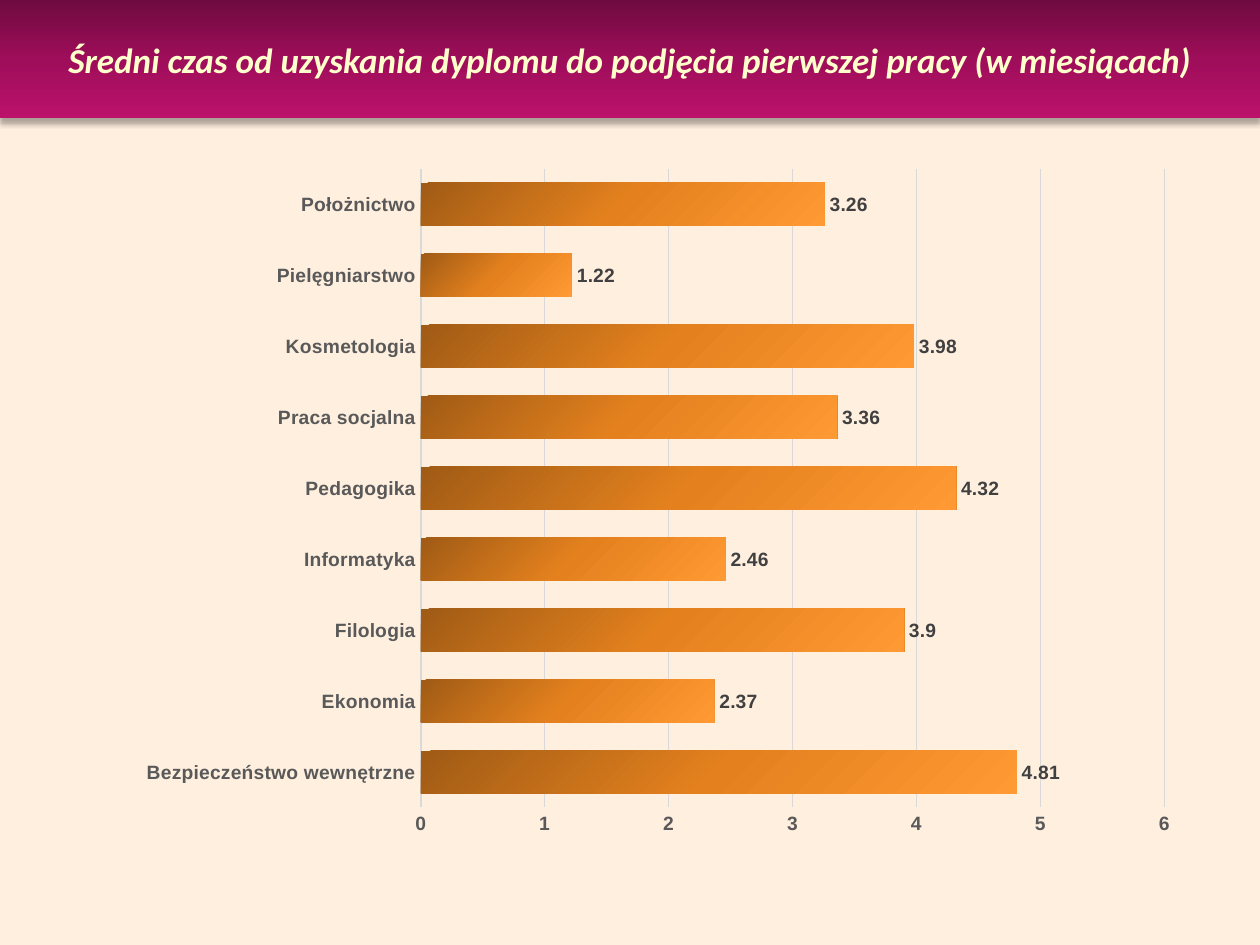
from dataclasses import dataclass

from lxml.etree import SubElement
from pptx import Presentation
from pptx.chart.data import CategoryChartData
from pptx.dml.color import RGBColor
from pptx.enum.chart import XL_CHART_TYPE, XL_LABEL_POSITION, XL_TICK_MARK
from pptx.enum.text import MSO_ANCHOR, MSO_AUTO_SIZE, PP_ALIGN
from pptx.oxml.ns import qn
from pptx.util import Inches, Pt


@dataclass(frozen=True)
class Theme:
    back: str = "FFEFDF"
    cream: str = "FFFFCC"
    plum: tuple = ("6F0A3F", "9E0E5A", "BB116B")
    amber: tuple = ("A05B15", "E4811E", "FF9933")
    axis: str = "595959"
    label: str = "404040"
    rule: str = "D9D9D9"
    head: str = "Calibri"
    body: str = "Arial"
    big: int = 20
    small: int = 11


TITLE = "Średni czas od uzyskania dyplomu do podjęcia pierwszej pracy (w miesiącach)"
MONTHS = {
    "Bezpieczeństwo wewnętrzne": 4.81,
    "Ekonomia": 2.37,
    "Filologia": 3.9,
    "Informatyka": 2.46,
    "Pedagogika": 4.32,
    "Praca socjalna": 3.36,
    "Kosmetologia": 3.98,
    "Pielęgniarstwo": 1.22,
    "Położnictwo": 3.26,
}


def rgb(code):
    return RGBColor.from_string(code)


class Deck:
    """Holds the theme and the current slide."""

    def __init__(self, theme):
        self.theme = theme
        self.prs = Presentation()
        self.prs.slide_width, self.prs.slide_height = Inches(10), Inches(7.5)
        self.slide = self.prs.slides.add_slide(self.prs.slide_layouts[5])
        fill = self.slide.background.fill
        fill.solid()
        fill.fore_color.rgb = rgb(theme.back)

    def blend(self, fill, props, tones, angle):
        """Fill with evenly spaced tones; angle is clockwise in degrees."""
        fill.gradient()
        fill.gradient_angle = 360 - angle
        stops = props.find(qn("a:gradFill")).find(qn("a:gsLst"))
        for stop in list(stops):
            stops.remove(stop)
        for i, tone in enumerate(tones):
            place = 100000 * i // (len(tones) - 1)
            stop = SubElement(stops, qn("a:gs"), pos=str(place))
            SubElement(stop, qn("a:srgbClr"), val=tone)

    def shade(self, shape):
        """Give the shape a soft shadow straight below it."""
        shape.shadow.inherit = False
        effects = shape._element.spPr.find(qn("a:effectLst"))
        shadow = SubElement(
            effects, qn("a:outerShdw"), blurRad=str(Pt(3.5)), dist=str(Pt(2.2)),
            dir="5400000", algn="t", rotWithShape="0")
        color = SubElement(shadow, qn("a:srgbClr"), val="000000")
        SubElement(color, qn("a:alpha"), val="32000")

    def style(self, font, color, size, face):
        font.name, font.size, font.bold = face, Pt(size), True
        font.color.rgb = rgb(color)

    def title(self, text):
        look = self.theme
        band = self.slide.shapes.title
        band.left, band.top = Inches(0), Inches(0)
        band.width, band.height = Inches(10), Inches(0.94)
        self.blend(band.fill, band._element.spPr, look.plum, 90)
        self.shade(band)
        frame = band.text_frame
        frame.word_wrap = True
        frame.auto_size = MSO_AUTO_SIZE.NONE
        frame.vertical_anchor = MSO_ANCHOR.MIDDLE
        para = frame.paragraphs[0]
        para.alignment = PP_ALIGN.CENTER
        run = para.add_run()
        run.text = text
        self.style(run.font, look.cream, look.big, look.head)
        run.font.italic = True

    def bars(self, values):
        look = self.theme
        data = CategoryChartData()
        data.categories = list(values)
        data.add_series("Series 1", list(values.values()))
        chart = self.slide.shapes.add_chart(
            XL_CHART_TYPE.BAR_CLUSTERED, Inches(0.98), Inches(1.23),
            Inches(8.43), Inches(5.51), data).chart
        chart.has_legend = chart.has_title = False
        self.style(chart.font, "000000", look.small, look.body)
        self.frame(chart)
        for axis in (chart.category_axis, chart.value_axis):
            axis.major_tick_mark = axis.minor_tick_mark = XL_TICK_MARK.NONE
            self.style(axis.tick_labels.font, look.axis, look.small, look.body)
        self.rule(chart.category_axis.format.line, 1)
        scale = chart.value_axis
        scale.minimum_scale, scale.maximum_scale, scale.major_unit = 0, 6, 1
        scale.format.line.fill.background()
        self.rule(scale.major_gridlines.format.line, 0.75)
        plot = chart.plots[0]
        plot.gap_width, plot.overlap, plot.vary_by_categories = 67, -13, False
        series = plot.series[0]
        fill = series.format.fill
        self.blend(fill, series._element.spPr, look.amber, 45)
        labels = series.data_labels
        labels.show_value = True
        labels.position = XL_LABEL_POSITION.OUTSIDE_END
        self.style(labels.font, look.label, look.small, look.body)

    def rule(self, line, width):
        line.width = Pt(width)
        line.color.rgb = rgb(self.theme.rule)

    def frame(self, chart):
        """Fix the inner plot area as shares of the chart."""
        area = chart._chartSpace.chart.plotArea
        layout = area.find(qn("c:layout"))
        if layout is None:
            layout = SubElement(area, qn("c:layout"))
            area.insert(0, layout)
        manual = SubElement(layout, qn("c:manualLayout"))
        for tag, value in (("layoutTarget", "inner"), ("xMode", "edge"),
                           ("yMode", "edge"), ("x", "0.28"), ("y", "0.02"),
                           ("w", "0.7"), ("h", "0.92")):
            SubElement(manual, qn("c:" + tag), val=value)


def main():
    deck = Deck(Theme())
    deck.title(TITLE)
    deck.bars(MONTHS)
    deck.prs.save("out.pptx")


if __name__ == "__main__":
    main()
